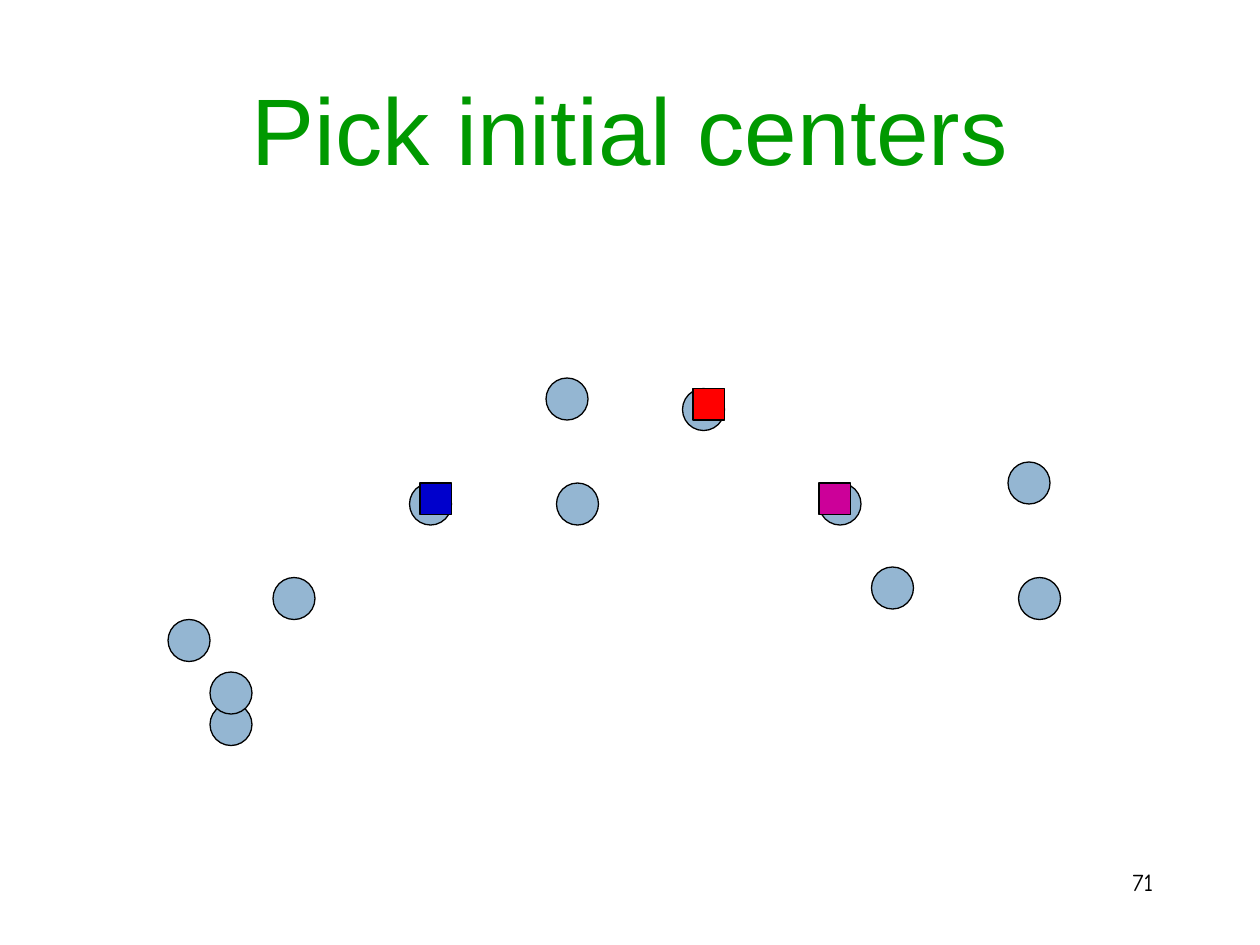
from pptx import Presentation
from pptx.dml.color import RGBColor
from pptx.enum.shapes import MSO_SHAPE
from pptx.enum.text import MSO_ANCHOR, PP_ALIGN
from pptx.util import Cm, Pt

OVAL, RECTANGLE = MSO_SHAPE.OVAL, MSO_SHAPE.RECTANGLE
TOP, MIDDLE = MSO_ANCHOR.TOP, MSO_ANCHOR.MIDDLE
CENTER, RIGHT = PP_ALIGN.CENTER, PP_ALIGN.RIGHT

THEME = {
    "background": RGBColor.from_string("FFFFFF"),
    "title": RGBColor.from_string("009900"),
    "text": RGBColor.from_string("000000"),
    "outline": RGBColor.from_string("000000"),
    "point": RGBColor.from_string("94B6D2"),
    "blue": RGBColor.from_string("0000CC"),
    "red": RGBColor.from_string("FF0000"),
    "magenta": RGBColor.from_string("CC0099"),
    "title_size": Pt(54),
    "number_size": Pt(14),
    "line_width": Pt(0.75),
}
GRID = 2.54 / 12
POINT_SIZE, CENTER_SIZE = 4, 3

presentation = Presentation()
presentation.slide_width, presentation.slide_height = Cm(25.4), Cm(19.05)
slide = presentation.slides.add_slide(presentation.slide_layouts[6])
slide.background.fill.solid()
slide.background.fill.fore_color.rgb = THEME["background"]

texts = [
    ("Pick initial centers", (1.9, 1, 21.6, 3.17), MIDDLE, CENTER, THEME["title"],
     {"name": "Arial", "size": THEME["title_size"]}),
    ("71", (18.21, 17.35, 5.29, 1.27), TOP, RIGHT, THEME["text"],
     {"name": "Comic Neue", "size": THEME["number_size"]}),
]
for wording, box, anchor, alignment, color, font_format in texts:
    text_frame = slide.shapes.add_textbox(*map(Cm, box)).text_frame
    text_frame.word_wrap = True
    text_frame.vertical_anchor = anchor
    paragraph = text_frame.paragraphs[0]
    paragraph.alignment = alignment
    run = paragraph.add_run()
    run.text = wording
    for attribute, value in font_format.items():
        setattr(run.font, attribute, value)
    run.font.color.rgb = color

points = [
    (20, 67), (16, 59), (26, 55), (96, 44), (52, 36), (65, 37),
    (53, 46), (39, 46), (97, 55), (78, 46), (20, 64), (83, 54),
]
centers = [(40, 46, "blue"), (66, 37, "red"), (78, 46, "magenta")]

markers = [(OVAL, column, row, POINT_SIZE, "point") for column, row in points]
markers += [(RECTANGLE, column, row, CENTER_SIZE, color) for column, row, color in centers]
for kind, column, row, size, color in markers:
    box = [Cm(GRID * steps) for steps in (column, row, size, size)]
    shape = slide.shapes.add_shape(kind, *box)
    shape.shadow.inherit = False
    shape.fill.solid()
    shape.fill.fore_color.rgb = THEME[color]
    shape.line.color.rgb = THEME["outline"]
    shape.line.width = THEME["line_width"]

presentation.save("out.pptx")
